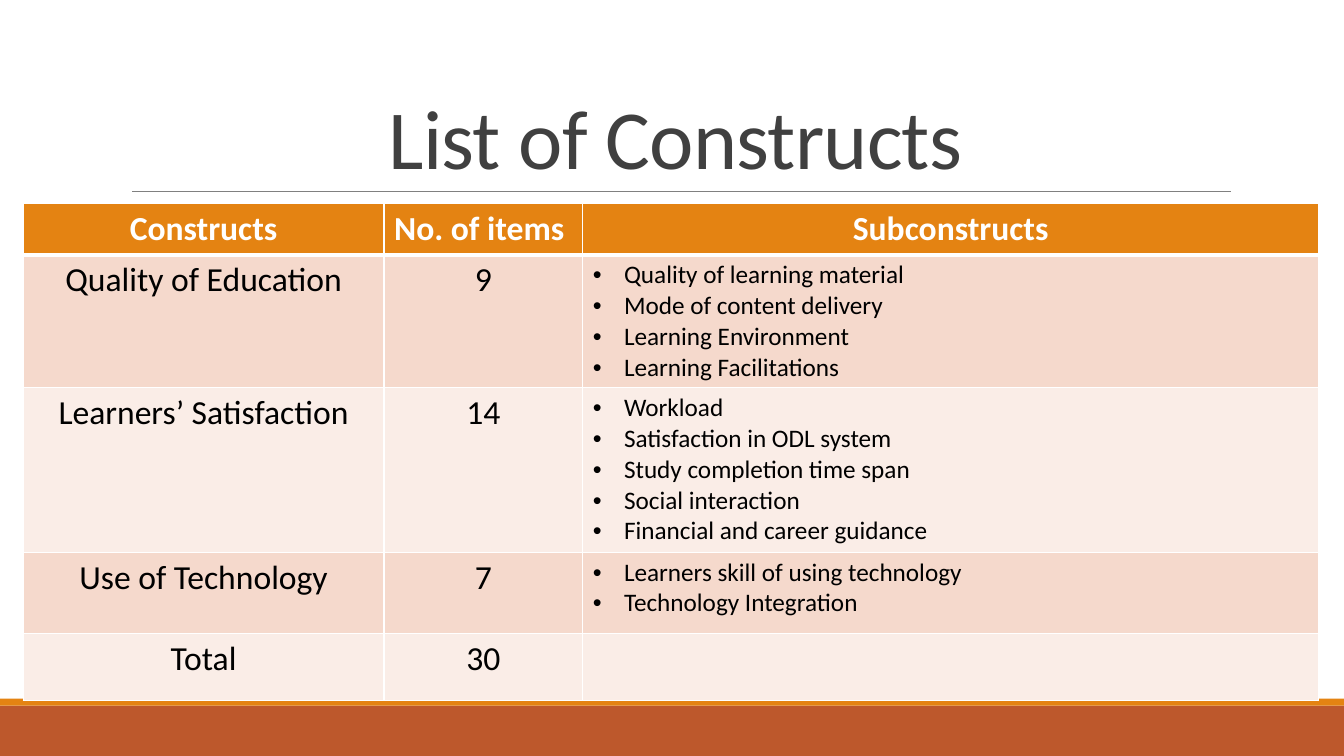
import pptx
import pptx.util
import pptx.dml.color
import pptx.enum.shapes
import pptx.enum.text
import pptx.oxml.ns
import lxml.etree

COLORS = {
    "orange": "E48312", "rust": "BD582C", "rule": "808080", "title": "404040",
    "white": "FFFFFF", "black": "000000", "odd": "F5D9CC", "even": "FAEDE7",
}
FONT = "Calibri"
ALIGN = pptx.enum.text.PP_ALIGN
rgb = {name: pptx.dml.color.RGBColor.from_string(value) for name, value in COLORS.items()}
qn = pptx.oxml.ns.qn

deck = pptx.Presentation()
deck.slide_width = pptx.util.Inches(13.33)
deck.slide_height = pptx.util.Inches(7.5)
slide = deck.slides.add_slide(deck.slide_layouts[5])


def place(*percents):
    """Turn alternating x, y percentages of the slide into lengths."""
    sides = (deck.slide_width, deck.slide_height)
    return [int(sides[i % 2] * share / 100) for i, share in enumerate(percents)]


def add_run(paragraph, text, size, color, bold=False):
    run = paragraph.add_run()
    run.text = text
    run.font.name = FONT
    run.font.size = pptx.util.Pt(size)
    run.font.bold = bold
    run.font.color.rgb = rgb[color]
    return run


# Footer bands
for color, top, height in (("rust", 93.33, 6.67), ("orange", 92.4, 0.93)):
    band = slide.shapes.add_shape(
        pptx.enum.shapes.MSO_SHAPE.RECTANGLE, *place(0, top, 100, height))
    band.shadow.inherit = False
    band.fill.solid()
    band.fill.fore_color.rgb = rgb[color]
    band.line.fill.background()

# Rule below the title
title_rule = slide.shapes.add_connector(
    pptx.enum.shapes.MSO_CONNECTOR.STRAIGHT, *place(9.83, 25.33, 91.6, 25.33))
title_rule.line.color.rgb = rgb["rule"]
title_rule.line.width = pptx.util.Pt(0.5)
lxml.etree.SubElement(title_rule._element.spPr, qn("a:effectLst"))

# Title
heading = slide.shapes.title
heading.left, heading.top, heading.width, heading.height = place(9, 4.13, 82.52, 21.2)
heading.text_frame.auto_size = pptx.enum.text.MSO_AUTO_SIZE.NONE
heading.text_frame.vertical_anchor = pptx.enum.text.MSO_ANCHOR.BOTTOM
heading_line = heading.text_frame.paragraphs[0]
heading_line.alignment = ALIGN.CENTER
heading_line.line_spacing = 0.85
heading_run = add_run(heading_line, "List of Constructs", 60, "title")
heading_run.font._element.set("spc", "-50")

# Table content: construct, number of items, subconstructs
header = ("Constructs", "No. of items", "Subconstructs")
constructs = [
    ("Quality of Education", "9",
     ["Quality of learning material", "Mode of content delivery",
      "Learning Environment", "Learning Facilitations"]),
    ("Learners’ Satisfaction", "14",
     ["Workload", "Satisfaction in ODL system", "Study completion time span",
      "Social interaction", "Financial and career guidance"]),
    ("Use of Technology", "7",
     ["Learners skill of using technology", "Technology Integration"]),
    ("Total", "30", []),
]
column_shares = (26.86, 14.78, 54.76)
row_shares = (6.67, 17.6, 21.73, 10.8, 8.8)

construct_table = slide.shapes.add_table(
    len(row_shares), len(column_shares),
    *place(1.72, 26.93, sum(column_shares), sum(row_shares))).table
for column, share in zip(construct_table.columns, column_shares):
    column.width = int(deck.slide_width * share / 100)
for row, share in zip(construct_table.rows, row_shares):
    row.height = int(deck.slide_height * share / 100)

# Table cells
for r, row_content in enumerate([header] + constructs):
    for c, content in enumerate(row_content):
        cell = construct_table.cell(r, c)

        # White borders, thicker below the header
        for side in "LRTB":
            thick = (r, side) in ((0, "B"), (1, "T"))
            border = lxml.etree.SubElement(
                cell._tc.get_or_add_tcPr(), qn("a:ln" + side),
                w=str(pptx.util.Pt(3 if thick else 1)))
            border_fill = lxml.etree.SubElement(border, qn("a:solidFill"))
            lxml.etree.SubElement(border_fill, qn("a:srgbClr"), val=COLORS["white"])
        cell.fill.solid()
        cell.fill.fore_color.rgb = rgb["orange" if r == 0 else "odd" if r % 2 else "even"]

        bulleted = isinstance(content, list)
        for i, text in enumerate(content if bulleted else [content]):
            frame = cell.text_frame
            paragraph = frame.add_paragraph() if i else frame.paragraphs[0]
            if bulleted:
                paragraph.alignment = ALIGN.JUSTIFY if r == 1 else ALIGN.LEFT
                props = paragraph._p.get_or_add_pPr()
                indent = pptx.util.Inches(0.31)
                props.set("marL", str(indent))
                props.set("indent", str(-indent))
                lxml.etree.SubElement(props, qn("a:buFont"), typeface="Arial")
                lxml.etree.SubElement(props, qn("a:buChar"), char="•")
                add_run(paragraph, text, 18, "black")
            else:
                paragraph.alignment = ALIGN.LEFT if (r, c) == (0, 1) else ALIGN.CENTER
                add_run(paragraph, text, 24, "black" if r else "white", bold=r == 0)

deck.save("out.pptx")
